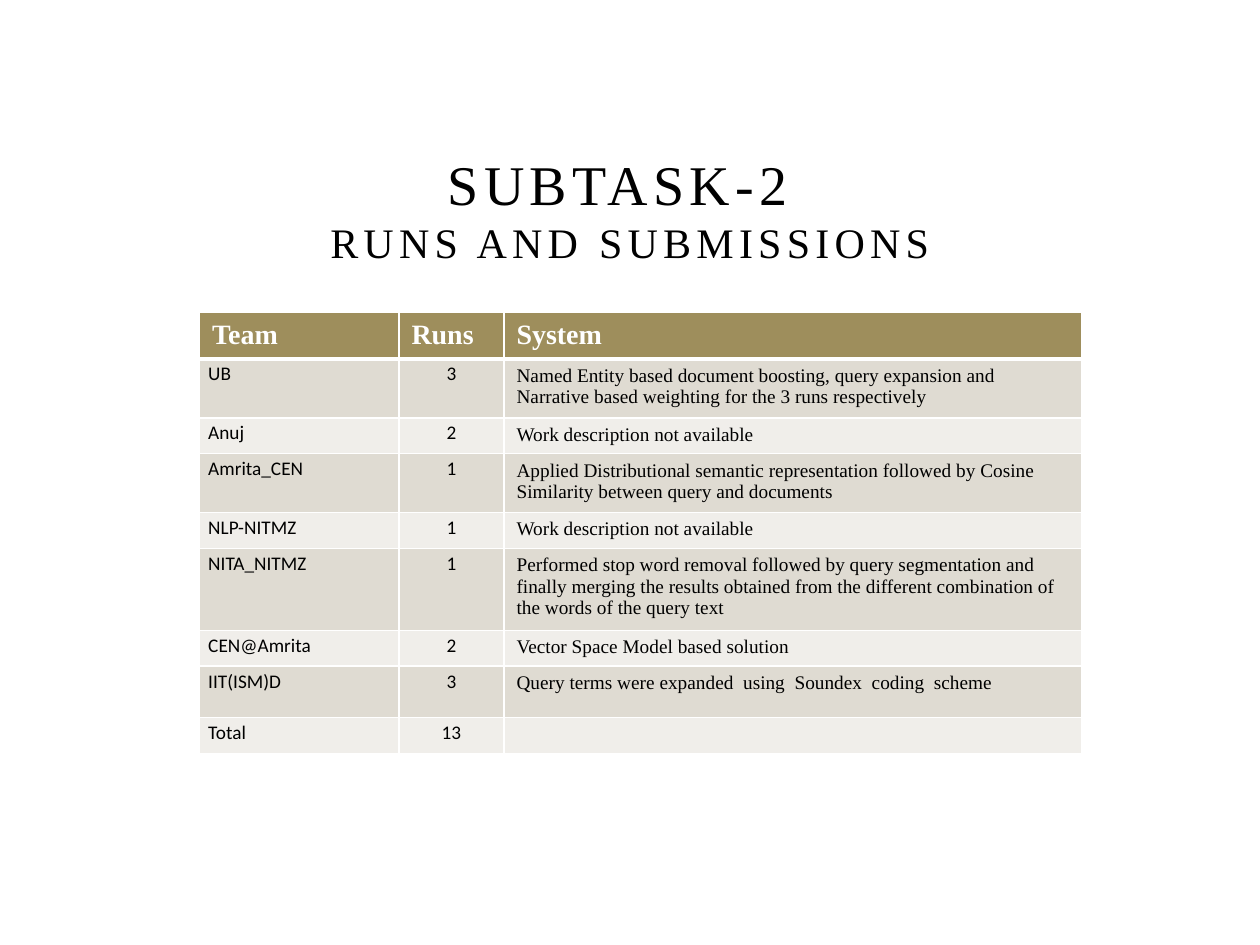
from lxml.etree import SubElement
from pptx import Presentation
from pptx.dml.color import RGBColor
from pptx.enum.text import MSO_ANCHOR, PP_ALIGN
from pptx.oxml.ns import qn
from pptx.util import Pt

# Content
TITLE = [("SUBTASK-2 ", 32), ("RUNS AND SUBMISSIONS", 24)]
HEADER = ("Team", "Runs", "System")
TEAMS = [
    ("UB", "3", "Named Entity based document boosting, query expansion and "
     "Narrative based weighting for the 3 runs respectively"),
    ("Anuj", "2", "Work description not available"),
    ("Amrita_CEN", "1", "Applied Distributional semantic representation followed by "
     "Cosine Similarity between query and documents"),
    ("NLP-NITMZ", "1", "Work description not available"),
    ("NITA_NITMZ", "1", "Performed stop word removal followed by query segmentation and "
     "finally merging the results obtained from the different combination of "
     "the words of the query text"),
    ("CEN@Amrita", "2", "Vector Space Model based solution"),
    ("IIT(ISM)D", "3", "Query terms were expanded  using  Soundex  coding  scheme"),
    ("Total", "13", ""),
]
COLORS = {"text": "000000", "white": "FFFFFF", "header": "9E8E5C",
          "odd": "DFDBD2", "even": "F0EEEA"}
SERIF, SANS = "Times New Roman", "Calibri"
COLUMN_WIDTHS = (114, 60, 330)
HEADER_HEIGHT, TALL_ROW, SHORT_ROW = 25.6, 29.5, 19.2


def color(name):
    return RGBColor.from_string(COLORS[name])


def style_font(font, name, size, color_name, bold=False):
    font.name, font.size, font.bold = name, Pt(size), bold
    font.color.rgb = color(color_name)


def style_cell(cell, fill, bottom_width=1):
    properties = cell._tc.get_or_add_tcPr()
    for side, width in (("L", 1), ("R", 1), ("T", 1), ("B", bottom_width)):
        line = SubElement(properties, qn(f"a:ln{side}"), w=str(Pt(width)))
        solid = SubElement(line, qn("a:solidFill"))
        SubElement(solid, qn("a:srgbClr"), val=COLORS["white"])
    cell.fill.solid()
    cell.fill.fore_color.rgb = color(fill)


deck = Presentation()
deck.slide_width, deck.slide_height = Pt(720), Pt(540)
page = deck.slides.add_slide(deck.slide_layouts[6])

# Title
box = page.shapes.add_textbox(Pt(108), Pt(102), Pt(504), Pt(54))
frame = box.text_frame
frame.word_wrap = True
frame.vertical_anchor = MSO_ANCHOR.BOTTOM
para = frame.paragraphs[0]
para.alignment = PP_ALIGN.CENTER
for index, (words, size) in enumerate(TITLE):
    if index:
        para.add_line_break()
    span = para.add_run()
    span.text = words
    style_font(span.font, SERIF, size, "text")
    span.font._element.set("spc", "300")

# Table grid
heights = [HEADER_HEIGHT] + [TALL_ROW, SHORT_ROW] * (len(TEAMS) // 2)
table = page.shapes.add_table(len(heights), len(HEADER), Pt(114), Pt(178.7),
                              Pt(sum(COLUMN_WIDTHS)), Pt(sum(heights))).table
for column, width in zip(table.columns, COLUMN_WIDTHS):
    column.width = Pt(width)
for row, height in zip(table.rows, heights):
    row.height = Pt(height)

# Header row
for column, words in enumerate(HEADER):
    cell = table.cell(0, column)
    style_cell(cell, "header", bottom_width=3)
    cell.text = words
    style_font(cell.text_frame.paragraphs[0].font, SERIF, 16, "white", bold=True)

# Team rows
for row, team in enumerate(TEAMS, start=1):
    for column, words in enumerate(team):
        cell = table.cell(row, column)
        style_cell(cell, "odd" if row % 2 else "even")
        cell.text = words
        para = cell.text_frame.paragraphs[0]
        is_system = column == 2
        if not is_system:
            cell.margin_left = cell.margin_right = Pt(5)
            cell.margin_top = cell.margin_bottom = Pt(0)
            para.line_spacing = 1.15
        if column == 1:
            para.alignment = PP_ALIGN.CENTER
        style_font(para.font, SERIF if is_system else SANS, 11, "text")
        if not words:  # keeps the empty cell from stretching its row
            SubElement(para._p, qn("a:endParaRPr"), sz="1100")

deck.save("out.pptx")
